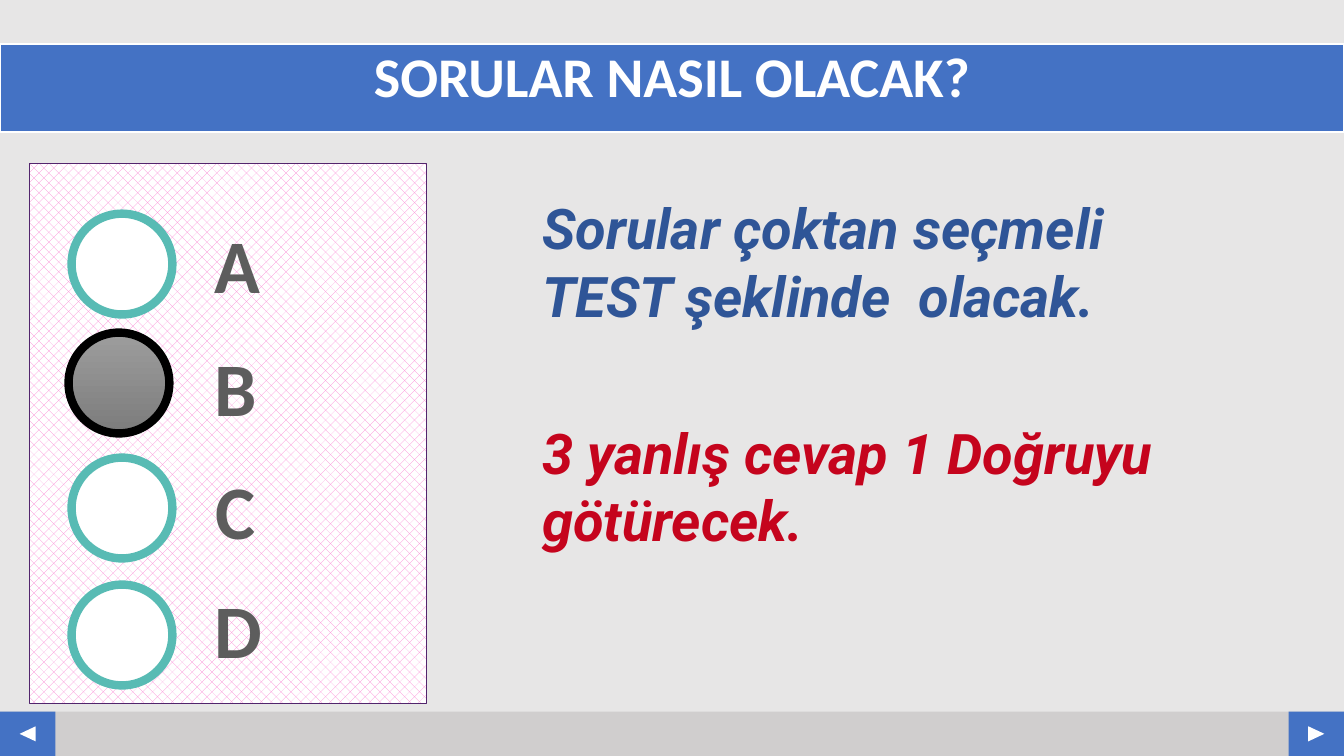
from dataclasses import dataclass

from pptx import Presentation
from pptx.dml.color import RGBColor
from pptx.enum.dml import MSO_PATTERN
from pptx.enum.shapes import MSO_SHAPE
from pptx.enum.text import MSO_ANCHOR, PP_ALIGN
from pptx.util import Inches, Pt

SLIDE_WIDTH, SLIDE_HEIGHT = Inches(13.33), Inches(7.5)
COLUMNS, ROWS = 80, 45


@dataclass(frozen=True)
class Theme:
    background: str = "E7E6E6"
    footer: str = "D0CECE"
    accent: str = "4472C4"
    white: str = "FFFFFF"
    card_dots: str = "FB85D4"
    card_border: str = "52256D"
    bubble_ring: str = "58BBB4"
    marked_ring: str = "000000"
    marked_top: str = "9D9D9D"
    marked_bottom: str = "7C7C7C"
    letter: str = "5D5D5D"
    format_note: str = "2F5597"
    penalty_note: str = "C5041D"
    heading_font: str = "Calibri"
    note_font: str = "Roboto"
    heading_size: int = 40
    letter_size: int = 54


THEME = Theme()


def color(code):
    return RGBColor.from_string(code)


def grid(left, top, width, height):
    column, row = SLIDE_WIDTH / COLUMNS, SLIDE_HEIGHT / ROWS
    return [round(n) for n in (left * column, top * row, width * column, height * row)]


def add_panel(slide, kind, area, fill=None, border=None, border_width=1):
    panel = slide.shapes.add_shape(kind, *grid(*area))
    panel.shadow.inherit = False
    if fill:
        panel.fill.solid()
        panel.fill.fore_color.rgb = color(fill)
    if border:
        panel.line.color.rgb = color(border)
        panel.line.width = Pt(border_width)
    else:
        panel.line.fill.background()
    return panel


def write(holder, words, font, size, ink, align, italic=False):
    frame = holder.text_frame
    frame.text = words
    paragraph = frame.paragraphs[0]
    paragraph.alignment = align
    style = paragraph.runs[0].font
    style.name, style.size = font, Pt(size)
    style.bold, style.italic = True, italic
    style.color.rgb = color(ink)
    return frame


def add_footer(slide):
    top, height, button = 42.36, 2.64, 3.3
    add_panel(slide, MSO_SHAPE.RECTANGLE, (0, top, COLUMNS, height), THEME.footer)
    for button_left, arrow_left, turn in ((0, 1.2, 270), (COLUMNS - button, 77.9, 90)):
        add_panel(slide, MSO_SHAPE.RECTANGLE, (button_left, top, button, height), THEME.accent)
        arrow = add_panel(slide, MSO_SHAPE.ISOSCELES_TRIANGLE,
                          (arrow_left, 43.2, 0.9, 0.96), THEME.white)
        arrow.rotation = turn


def add_title(slide, words):
    band = add_panel(slide, MSO_SHAPE.RECTANGLE, (0, 2.64, COLUMNS, 5.22),
                     THEME.accent, THEME.white, 1.5)
    frame = write(band, words, THEME.heading_font, THEME.heading_size,
                  THEME.white, PP_ALIGN.CENTER)
    frame.vertical_anchor = MSO_ANCHOR.TOP
    frame.paragraphs[0].line_spacing = 0.9


def add_answer_card(slide):
    card = add_panel(slide, MSO_SHAPE.RECTANGLE, (1.74, 9.72, 23.64, 32.16),
                     border=THEME.card_border)
    card.fill.patterned()
    card.fill.pattern = MSO_PATTERN.PERCENT_30
    card.fill.fore_color.rgb = color(THEME.card_dots)
    card.fill.back_color.rgb = color(THEME.white)


def add_choice(slide, letter, bubble_top, letter_top, letter_width, marked=False):
    left = 4.08 if marked else 4.26
    ring = THEME.marked_ring if marked else THEME.bubble_ring
    bubble = add_panel(slide, MSO_SHAPE.OVAL, (left, bubble_top, 6, 6), THEME.white, ring, 6)
    if marked:
        bubble.fill.gradient()
        bubble.fill.gradient_angle = 270
        shades = (THEME.marked_top, THEME.marked_bottom)
        for stop, shade in zip(bubble.fill.gradient_stops, shades):
            stop.color.rgb = color(shade)
    label = slide.shapes.add_textbox(*grid(12.12, letter_top, letter_width, 6.06))
    frame = write(label, letter, THEME.heading_font, THEME.letter_size,
                  THEME.letter, PP_ALIGN.CENTER)
    frame.word_wrap = False


def add_note(slide, words, top, ink):
    note = slide.shapes.add_textbox(*grid(31.5, top, 42.54, 8.88))
    frame = write(note, words, THEME.note_font, THEME.heading_size, ink,
                  PP_ALIGN.LEFT, italic=True)
    frame.word_wrap = True
    frame.vertical_anchor = MSO_ANCHOR.MIDDLE
    frame.margin_left = frame.margin_right = Inches(0.13)
    frame.margin_top = frame.margin_bottom = Inches(0.07)


def main():
    deck = Presentation()
    deck.slide_width, deck.slide_height = SLIDE_WIDTH, SLIDE_HEIGHT
    slide = deck.slides.add_slide(deck.slide_layouts[6])
    slide.background.fill.solid()
    slide.background.fill.fore_color.rgb = color(THEME.background)

    add_footer(slide)
    add_answer_card(slide)
    add_title(slide, "SORULAR NASIL OLACAK?")
    add_choice(slide, "A", 12.72, 12.66, 4.02)
    add_choice(slide, "B", 19.8, 19.98, 3.78, marked=True)
    add_choice(slide, "C", 27.24, 27.3, 3.78)
    add_choice(slide, "D", 34.8, 34.38, 4.08)
    add_note(slide, "Sorular çoktan seçmeli TEST şeklinde  olacak.", 11.1, THEME.format_note)
    add_note(slide, "3 yanlış cevap 1 Doğruyu götürecek.", 24.48, THEME.penalty_note)
    deck.save("out.pptx")


if __name__ == "__main__":
    main()
